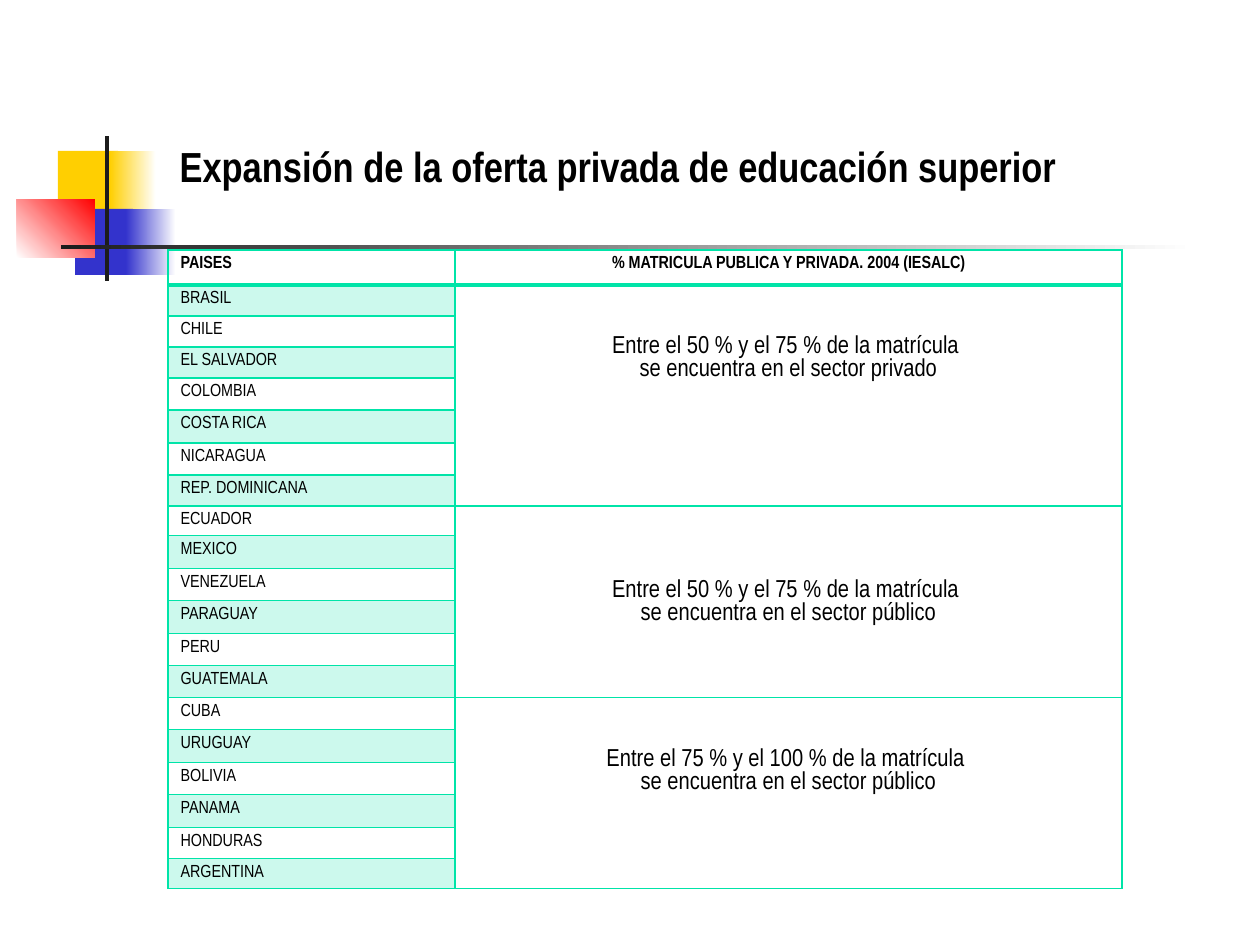
from lxml.etree import SubElement
from pptx import Presentation
from pptx.dml.color import RGBColor
from pptx.enum.shapes import MSO_SHAPE
from pptx.enum.text import MSO_ANCHOR, MSO_AUTO_SIZE, PP_ALIGN
from pptx.oxml.ns import qn
from pptx.util import Pt

FONT = "Arial Narrow"
BLACK = RGBColor(0, 0, 0)
WHITE = RGBColor(255, 255, 255)
YELLOW = RGBColor(0xFF, 0xCF, 0x01)
BLUE = RGBColor(0x33, 0x33, 0xCC)
RED = RGBColor(0xFF, 0, 0)
CHARCOAL = RGBColor(0x1C, 0x1C, 0x1C)
GREEN = RGBColor(0, 0xE4, 0xA8)

TITLE = "Expansión de la oferta privada de educación superior"
HEADERS = ["PAISES", "% MATRICULA PUBLICA Y PRIVADA. 2004 (IESALC)"]
# countries, lines of the shared cell, text lines left free above them
GROUPS = [
    (["BRASIL", "CHILE", "EL SALVADOR", "COLOMBIA", "COSTA RICA",
      "NICARAGUA", "REP. DOMINICANA"],
     ["Entre el 50 % y el 75 % de la matrícula ",
      "se encuentra en el sector privado"], 2),
    (["ECUADOR", "MEXICO", "VENEZUELA", "PARAGUAY", "PERU", "GUATEMALA"],
     ["Entre el 50 % y el 75 % de la matrícula ",
      "se encuentra en el sector público"], 3),
    (["CUBA", "URUGUAY", "BOLIVIA", "PANAMA", "HONDURAS", "ARGENTINA"],
     ["Entre el 75 % y el 100 % de la matrícula ",
      "se encuentra en el sector público"], 2),
]
FREE_LINE_HEIGHT = 23
COLUMN_WIDTHS = [287, 667]
ROW_HEIGHTS = [35, 31, 31, 31, 32, 33, 32, 31, 30, 33,
               32, 33, 32, 32, 32, 33, 32, 33, 31, 30]
# left, top, width, height, first colour, last colour, angle
ORNAMENT = [
    (58, 151, 60, 66, YELLOW, YELLOW, 0),
    (110, 151, 46, 66, YELLOW, WHITE, 0),
    (75, 209, 58, 66, BLUE, BLUE, 0),
    (126, 209, 50, 66, BLUE, WHITE, 0),
    (17, 199, 78, 59, WHITE, RED, 45),
    (105, 136, 4, 145, CHARCOAL, CHARCOAL, 0),
    (61, 245, 1134, 4, CHARCOAL, WHITE, 0),
]


def px(value):
    return round(value * 914400 / 126)


def add_block(slide, left, top, width, height, first, last, angle):
    shape = slide.shapes.add_shape(
        MSO_SHAPE.RECTANGLE, px(left), px(top), px(width), px(height))
    shape.shadow.inherit = False
    shape.line.fill.background()
    if first == last:
        shape.fill.solid()
        shape.fill.fore_color.rgb = first
        return
    shape.fill.gradient()
    shape.fill.gradient_angle = angle
    for stop, color, position in zip(shape.fill.gradient_stops, (first, last), (0, 1)):
        stop.color.rgb = color
        stop.position = position


def set_borders(cell, widths):
    properties = cell._tc.get_or_add_tcPr()
    for side, width in zip("LRTB", widths):
        line = SubElement(properties, qn(f"a:ln{side}"), w=str(Pt(width)))
        fill = SubElement(line, qn("a:solidFill"))
        SubElement(fill, qn("a:srgbClr"), val=str(GREEN))


def set_tint(cell, color):
    cell.fill.solid()
    cell.fill.fore_color.rgb = color
    color_element = cell._tc.tcPr.find(qn("a:solidFill"))[0]
    SubElement(color_element, qn("a:alpha"), val="20000")


def write_cell(cell, lines, size=10, bold=False, align=PP_ALIGN.LEFT):
    cell.text = "\n".join(lines)
    for paragraph in cell.text_frame.paragraphs:
        paragraph.alignment = align
        paragraph.font.name = FONT
        paragraph.font.size = Pt(size)
        paragraph.font.bold = bold
        paragraph.font.color.rgb = BLACK


def add_enrolment_table(slide):
    table = slide.shapes.add_table(
        len(ROW_HEIGHTS), 2, px(168), px(250),
        px(sum(COLUMN_WIDTHS)), px(sum(ROW_HEIGHTS))).table
    table.first_row = table.horz_banding = False
    for column, width in zip(table.columns, COLUMN_WIDTHS):
        column.width = px(width)
    for index, (row, height) in enumerate(zip(table.rows, ROW_HEIGHTS)):
        row.height = px(height)
        for cell in row.cells:
            set_borders(cell, (1, 1, 2 if index == 1 else 1, 2 if index == 0 else 1))
            cell.fill.background()

    # Header row
    for column, (text, align) in enumerate(zip(HEADERS, (PP_ALIGN.LEFT, PP_ALIGN.CENTER))):
        write_cell(table.cell(0, column), [text], bold=True, align=align)

    # One row per country, one shared cell per group
    row = 1
    for countries, lines, free_lines in GROUPS:
        shared = table.cell(row, 1)
        shared.merge(table.cell(row + len(countries) - 1, 1))
        write_cell(shared, lines, size=14, align=PP_ALIGN.CENTER)
        shared.margin_top = px(5 + FREE_LINE_HEIGHT * free_lines)
        for country in countries:
            cell = table.cell(row, 0)
            write_cell(cell, [country])
            if row % 2:
                set_tint(cell, GREEN)
            row += 1


def main():
    presentation = Presentation()
    presentation.slide_width, presentation.slide_height = px(1260), px(945)
    slide = presentation.slides.add_slide(presentation.slide_layouts[5])

    # Corner ornament
    for block in ORNAMENT:
        add_block(slide, *block)

    # Title
    title = slide.shapes.title
    title.left, title.top, title.width, title.height = px(167), px(88), px(1065), px(109)
    title.text_frame.text = TITLE
    title.text_frame.auto_size = MSO_AUTO_SIZE.NONE
    title.text_frame.vertical_anchor = MSO_ANCHOR.BOTTOM
    paragraph = title.text_frame.paragraphs[0]
    paragraph.alignment = PP_ALIGN.LEFT
    paragraph.font.name = FONT
    paragraph.font.size = Pt(24)
    paragraph.font.bold = True
    paragraph.font.color.rgb = BLACK

    add_enrolment_table(slide)
    presentation.save("out.pptx")


if __name__ == "__main__":
    main()
